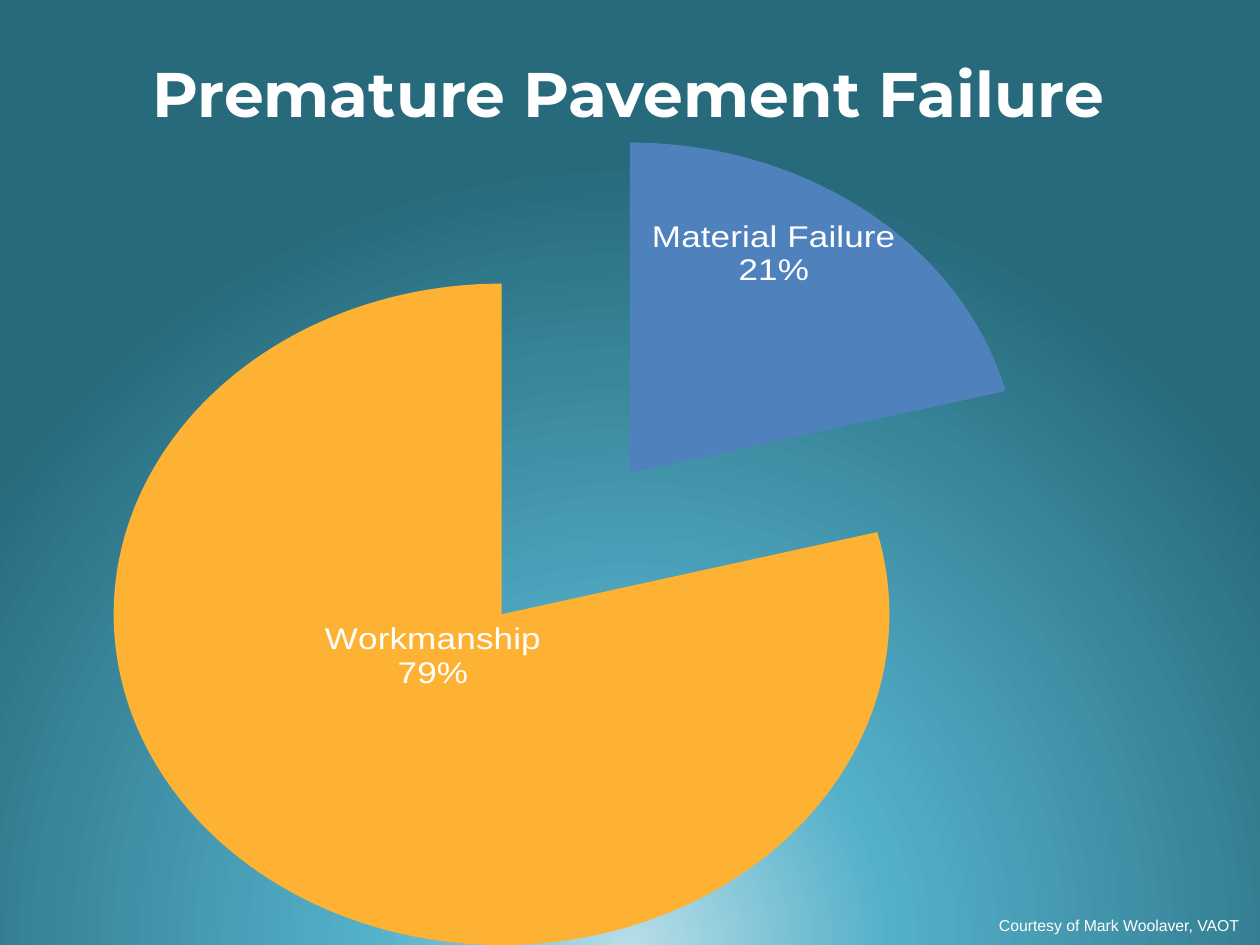
from pptx import Presentation
from pptx.chart.data import CategoryChartData
from pptx.dml.color import RGBColor
from pptx.enum.chart import XL_CHART_TYPE
from pptx.enum.text import MSO_ANCHOR, PP_ALIGN
from pptx.oxml import parse_xml
from pptx.oxml.ns import nsdecls
from pptx.util import Inches, Pt

COLORS = {
    "text": "FFFFFF",
    "chart_text": "0F1D27",
    "material": "4F81BD",
    "workmanship": "FEB233",
    "glow": "B7DEE8",
    "middle": "54B0C9",
    "edge": "276A7C",
}
# name, share, colour, explosion, label shift as fractions of the chart
SLICES = [
    ("Material Failure", 21, "material", 0, (0.02, -0.11)),
    ("Workmanship", 79, "workmanship", 54, (0.04, -0.11)),
]


def color(name):
    return RGBColor.from_string(COLORS[name])


def set_background(page):
    """Fill the page with a glow centred below its bottom edge."""
    stops = "".join(
        f'<a:gs pos="{place * 1000}"><a:srgbClr val="{COLORS[name]}"/></a:gs>'
        for place, name in ((0, "glow"), (33, "middle"), (100, "edge"))
    )
    background = parse_xml(
        f'<p:bg {nsdecls("p", "a")}><p:bgPr><a:gradFill rotWithShape="1">'
        f'<a:gsLst>{stops}</a:gsLst><a:path path="circle">'
        '<a:fillToRect l="50000" t="130000" r="50000" b="-30000"/></a:path>'
        '</a:gradFill><a:effectLst/></p:bgPr></p:bg>'
    )
    page.element.cSld.insert(0, background)


def add_span(para, text, font, size, bold=False):
    span = para.add_run()
    span.text = text
    span.font.name = font
    span.font.size = Pt(size)
    span.font.bold = bold
    span.font.color.rgb = color("text")


def set_title(page, text):
    title = page.shapes.title
    title.left, title.top = Inches(0), Inches(0.11)
    title.width, title.height = Inches(9.97), Inches(1.25)
    frame = title.text_frame
    frame.vertical_anchor = MSO_ANCHOR.MIDDLE
    para = frame.paragraphs[0]
    para.alignment = PP_ALIGN.CENTER
    add_span(para, text, "Montserrat", 36, bold=True)


def add_credit(page, text):
    box = page.shapes.add_textbox(Inches(7.83), Inches(7.22), Inches(2.14), Inches(0.25))
    box.text_frame.word_wrap = False
    add_span(box.text_frame.paragraphs[0], text, "Arial", 9)


def slice_label(index, shift):
    """Return a category and percentage label moved from the slice centre."""
    return parse_xml(
        f'<c:dLbl {nsdecls("c", "a")}><c:idx val="{index}"/>'
        f'<c:layout><c:manualLayout><c:x val="{shift[0]}"/><c:y val="{shift[1]}"/>'
        '</c:manualLayout></c:layout><c:spPr><a:noFill/><a:ln><a:noFill/></a:ln></c:spPr>'
        '<c:txPr><a:bodyPr/><a:p><a:pPr><a:defRPr sz="2000" b="0"><a:solidFill>'
        f'<a:srgbClr val="{COLORS["text"]}"/></a:solidFill><a:latin typeface="Arial"/>'
        '</a:defRPr></a:pPr><a:endParaRPr lang="en-US"/></a:p></c:txPr>'
        '<c:dLblPos val="ctr"/><c:showLegendKey val="0"/><c:showVal val="0"/>'
        '<c:showCatName val="1"/><c:showSerName val="0"/><c:showPercent val="1"/>'
        '<c:showBubbleSize val="0"/><c:separator>\n</c:separator></c:dLbl>'
    )


def place_plot(chart, left, top, width, height):
    """Set the inner plot area in fractions of the chart."""
    plot_area = chart.element.chart.plotArea
    for layout in plot_area.xpath("c:layout"):
        plot_area.remove(layout)
    plot_area.insert(0, parse_xml(
        f'<c:layout {nsdecls("c")}><c:manualLayout><c:layoutTarget val="inner"/>'
        '<c:xMode val="edge"/><c:yMode val="edge"/>'
        f'<c:x val="{left}"/><c:y val="{top}"/><c:w val="{width}"/><c:h val="{height}"/>'
        '</c:manualLayout></c:layout>'
    ))


def add_failure_pie(page):
    data = CategoryChartData()
    data.categories = [name for name, *_ in SLICES]
    data.add_series("Series 1", [share for _, share, *_ in SLICES])
    chart = page.shapes.add_chart(
        XL_CHART_TYPE.PIE, Inches(0), Inches(0), Inches(10), Inches(7.5), data
    ).chart
    chart.has_legend = False
    chart.has_title = False
    chart.font.name = "Arial"
    chart.font.size = Pt(10)
    chart.font.color.rgb = color("chart_text")
    place_plot(chart, 0, 0.177, 1, 0.821)

    plot = chart.plots[0]
    plot.vary_by_categories = True
    series = plot.series[0]
    labels = series.data_labels
    labels.show_value = False
    labels.show_category_name = True
    labels.show_percentage = True
    label_list = series.points[0].data_label and series._element.get_or_add_dLbls()
    for index, (_, _, fill_name, explosion, shift) in enumerate(SLICES):
        fill = series.points[index].format.fill
        fill.solid()
        fill.fore_color.rgb = color(fill_name)
        if explosion:
            point = series._element.xpath(f'c:dPt[c:idx/@val="{index}"]')[0]
            point.xpath("c:idx")[0].addnext(
                parse_xml(f'<c:explosion {nsdecls("c")} val="{explosion}"/>')
            )
        label_list.insert(index, slice_label(index, shift))


def main():
    deck = Presentation()
    deck.slide_width, deck.slide_height = Inches(10), Inches(7.5)
    page = deck.slides.add_slide(deck.slide_layouts[5])
    set_background(page)
    set_title(page, "Premature Pavement Failure")
    add_credit(page, "Courtesy of Mark Woolaver, VAOT")
    add_failure_pie(page)
    deck.save("out.pptx")


if __name__ == "__main__":
    main()
